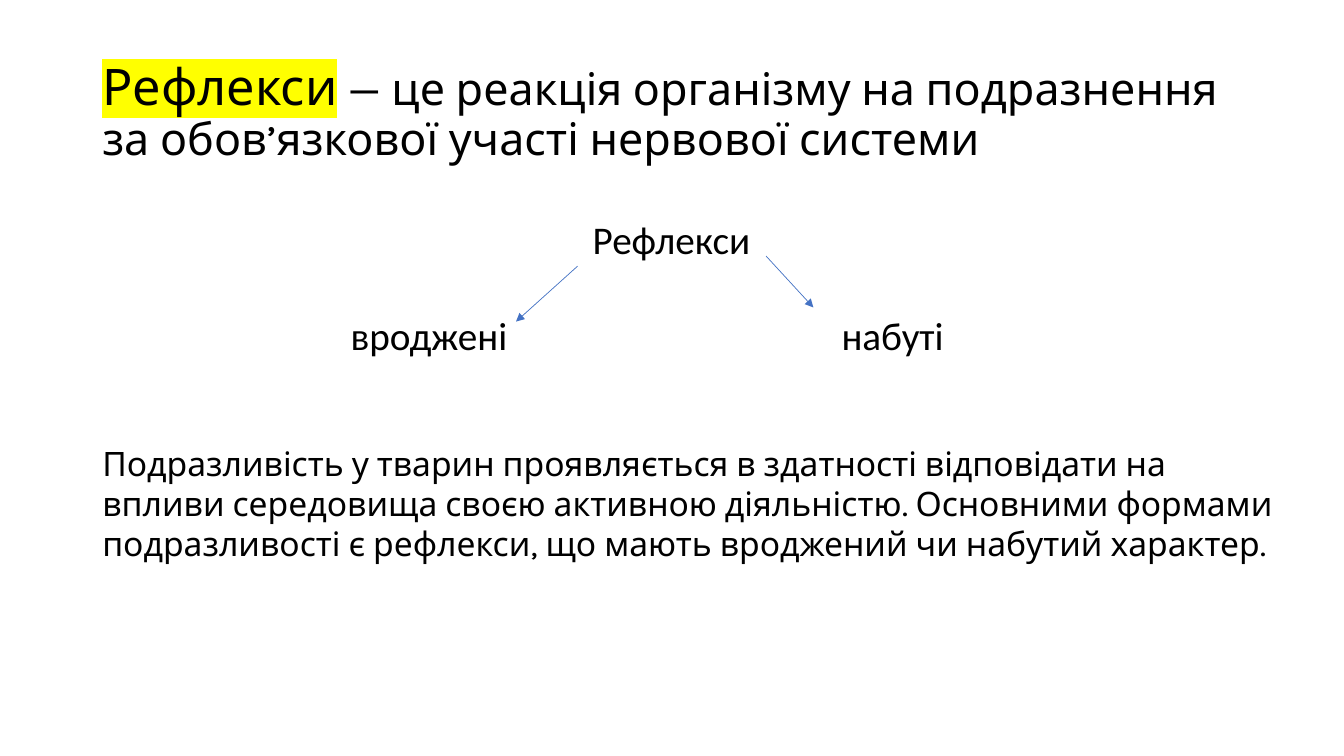
from lxml.etree import SubElement
from pptx import Presentation
from pptx.dml.color import RGBColor
from pptx.enum.shapes import MSO_CONNECTOR
from pptx.enum.text import MSO_ANCHOR, MSO_AUTO_SIZE
from pptx.oxml import parse_xml
from pptx.oxml.ns import nsdecls, qn
from pptx.util import Pt

BLACK = RGBColor(0x00, 0x00, 0x00)
YELLOW = RGBColor(0xFF, 0xFF, 0x00)
BLUE = RGBColor(0x44, 0x72, 0xC4)

BODY_FONT = "Karla"
DIAGRAM_FONT = "Calibri"
LEFT_MARGIN = 66
BRANCH_TOP = 218.9


def style_span(span, font, size):
    span.font.name = font
    span.font.size = Pt(size)
    span.font.color.rgb = BLACK


def highlight(span, color):
    """Mark an already coloured span with a background colour."""
    fill = span._r.rPr.find(qn("a:solidFill"))
    fill.addnext(parse_xml(
        f'<a:highlight {nsdecls("a")}><a:srgbClr val="{color}"/></a:highlight>'))


def add_box(page, left, top, width, height):
    box = page.shapes.add_textbox(Pt(left), Pt(top), Pt(width), Pt(height))
    box.text_frame.word_wrap = True
    return box


def add_definition(page, term, meaning):
    box = add_box(page, LEFT_MARGIN, 28.8, 828, 104.4)
    box.text_frame.vertical_anchor = MSO_ANCHOR.MIDDLE
    para = box.text_frame.paragraphs[0]
    para.line_spacing = 0.9
    for text, size in ((term, 36), (meaning, 32)):
        span = para.add_run()
        span.text = text
        style_span(span, BODY_FONT, size)
    highlight(para.runs[0], YELLOW)


def add_text(page, text, left, top, width, height, font, size):
    box = add_box(page, left, top, width, height)
    box.text_frame.auto_size = MSO_AUTO_SIZE.SHAPE_TO_FIT_TEXT
    box.text_frame.text = text
    style_span(box.text_frame.paragraphs[0].runs[0], font, size)


def add_label(page, text, left, top, width):
    add_text(page, text, left, top, width, 41.2, DIAGRAM_FONT, 28)


def add_arrow(page, start, end):
    arrow = page.shapes.add_connector(
        MSO_CONNECTOR.STRAIGHT, *(Pt(value) for value in (*start, *end)))
    arrow.line.color.rgb = BLUE
    arrow.line.width = Pt(0.5)
    SubElement(arrow.line._get_or_add_ln(), qn("a:tailEnd"), type="triangle")
    SubElement(arrow._element.spPr, qn("a:effectLst"))


def main():
    deck = Presentation()
    deck.slide_width, deck.slide_height = Pt(960), Pt(540)
    page = deck.slides.add_slide(deck.slide_layouts[6])

    add_definition(
        page, "Рефлекси",
        " — це реакція організму на подразнення за обов’язкової участі "
        "нервової системи")

    add_label(page, "Рефлекси", 416.2, 150.5, 128.9)
    add_label(page, "вроджені", 243.4, BRANCH_TOP, 133.2)
    add_label(page, "набуті", 594, BRANCH_TOP, 133.2)
    add_arrow(page, (547.2, 182.9), (581, 219.6))
    add_arrow(page, (412.6, 190.1), (368.6, 229.7))

    add_text(
        page,
        "Подразливість у тварин проявляється в здатності відповідати на "
        "впливи середовища своєю активною діяльністю. Основними формами "
        "подразливості є рефлекси, що мають вроджений чи набутий характер.",
        LEFT_MARGIN, 312.5, 856.8, 94.3, BODY_FONT, 24)

    deck.save("out.pptx")


if __name__ == "__main__":
    main()
